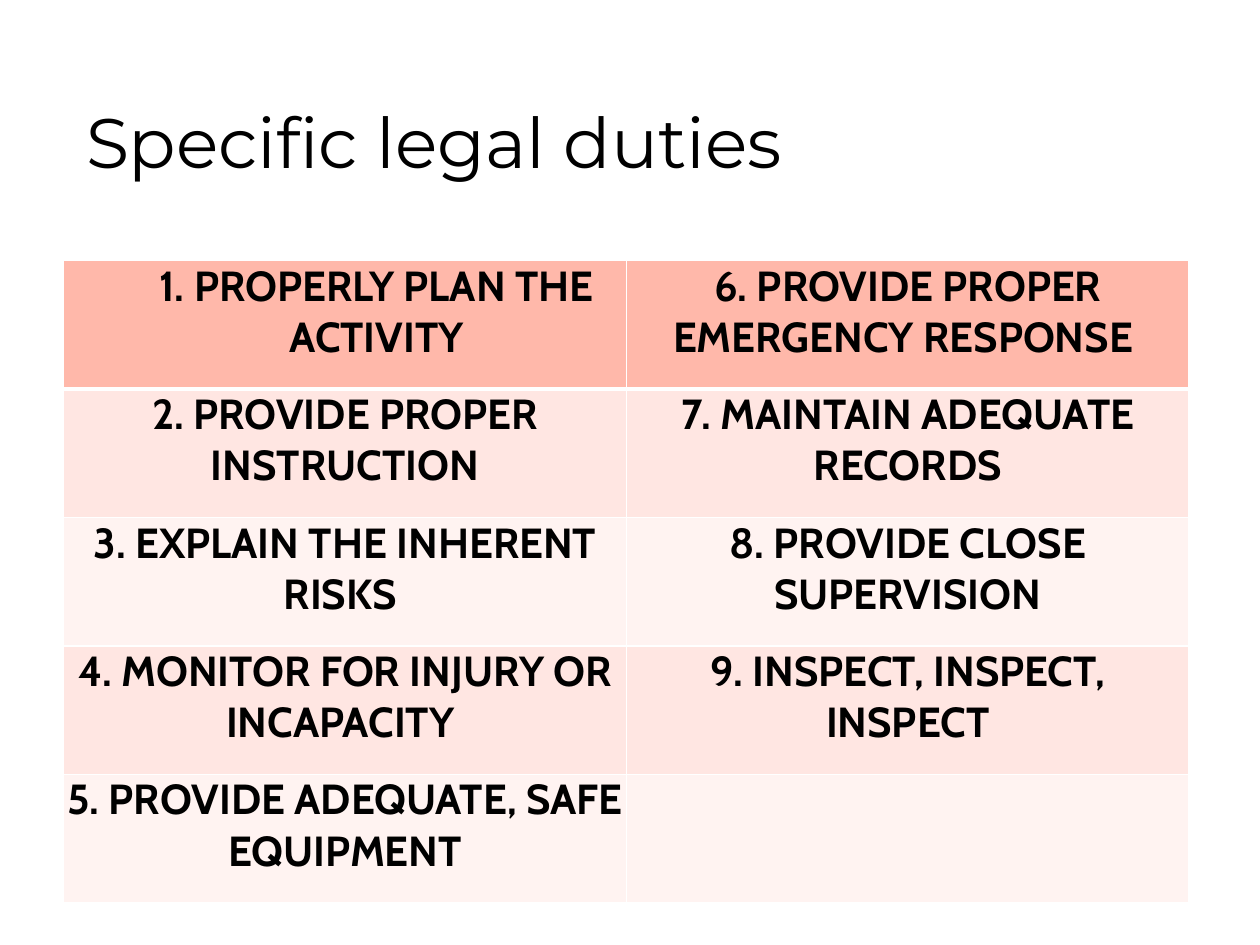
from lxml import etree
from pptx import Presentation
from pptx.dml.color import RGBColor
from pptx.enum.text import MSO_ANCHOR, PP_ALIGN
from pptx.oxml.ns import qn
from pptx.util import Pt

BOTTOM = MSO_ANCHOR.BOTTOM
CENTER = PP_ALIGN.CENTER

DUTIES = [
    ("1. PROPERLY PLAN THE ACTIVITY", "6. PROVIDE PROPER EMERGENCY RESPONSE "),
    ("2. PROVIDE PROPER INSTRUCTION", "7. MAINTAIN ADEQUATE RECORDS"),
    ("3. EXPLAIN THE INHERENT RISKS ", "8. PROVIDE CLOSE SUPERVISION"),
    ("4. MONITOR FOR INJURY OR INCAPACITY ", "9. INSPECT, INSPECT, INSPECT"),
    ("5. PROVIDE ADEQUATE, SAFE EQUIPMENT", ""),
]
HEADER, BANDS = "FFB8AA", ("FFF3F1", "FFE6E2")


def rgb(value):
    return RGBColor.from_string(value)


def set_borders(cell, widths):
    """Draw white borders; widths are in points: left, right, top, bottom."""
    tc_pr = cell._tc.get_or_add_tcPr()
    for i, (side, width) in enumerate(zip("LRTB", widths)):
        ln = etree.Element(qn(f"a:ln{side}"), w=str(Pt(width)))
        fill = etree.SubElement(ln, qn("a:solidFill"))
        etree.SubElement(fill, qn("a:srgbClr"), val="FFFFFF")
        tc_pr.insert(i, ln)


prs = Presentation()
prs.slide_width, prs.slide_height = Pt(720), Pt(540)
s = prs.slides.add_slide(prs.slide_layouts[6])

# Title
sp = s.shapes.add_textbox(Pt(31.5), Pt(18), Pt(612), Pt(90))
tf = sp.text_frame
tf.word_wrap = True
tf.vertical_anchor = BOTTOM
tf.margin_left = Pt(17.7)
tf.text = "Specific legal duties"
font = tf.paragraphs[0].runs[0].font
font.name, font.size, font.color.rgb = "Montserrat", Pt(40), rgb("000000")

# Table of duties
rows, cols = len(DUTIES), 2
table = s.shapes.add_table(rows, cols, Pt(36.3), Pt(149), Pt(643.2), Pt(73.4 * rows)).table
for row, texts in enumerate(DUTIES):
    for col, text in enumerate(texts):
        cell = table.cell(row, col)
        cell.margin_left = cell.margin_right = cell.margin_top = cell.margin_bottom = 0
        cell.fill.solid()
        cell.fill.fore_color.rgb = rgb(BANDS[row % 2] if row else HEADER)
        # A thicker line parts the header row from the rest
        set_borders(cell, (1, 1, 3 if row == 1 else 1, 3 if row == 0 else 1))
        if not text:
            continue
        p = cell.text_frame.paragraphs[0]
        p.text = text
        p.alignment = CENTER
        font = p.runs[0].font
        font.name, font.size, font.bold = "Cabin", Pt(24), True
        font.color.rgb = rgb("000000")

# The first duty is indented one level
p = table.cell(0, 0).text_frame.paragraphs[0]
p.level = 1
p_pr = p._p.get_or_add_pPr()
p_pr.set("marL", str(Pt(36)))
p_pr.set("indent", "0")

prs.save("out.pptx")
